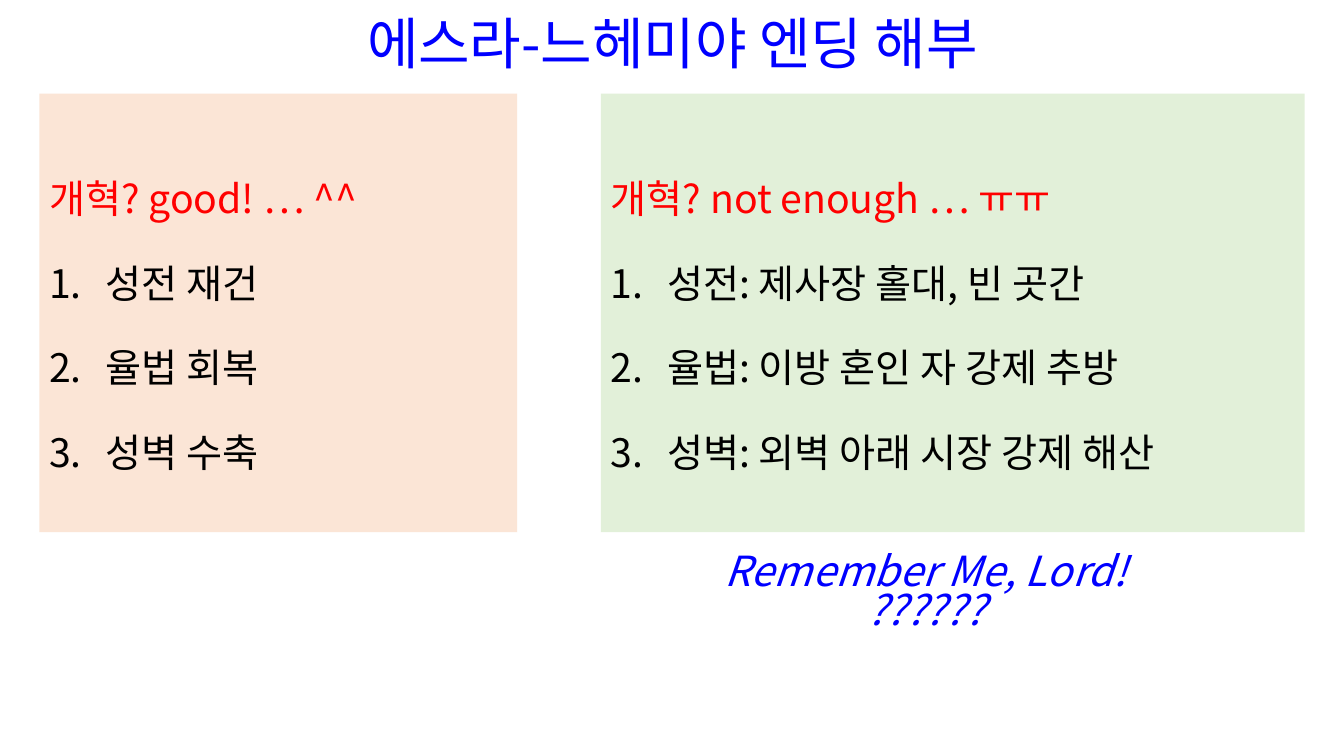
from lxml import etree
from pptx import Presentation
from pptx.dml.color import RGBColor
from pptx.enum.shapes import MSO_SHAPE
from pptx.enum.text import MSO_ANCHOR, PP_ALIGN
from pptx.oxml.ns import qn
from pptx.util import Inches, Pt

RECT = MSO_SHAPE.RECTANGLE
MIDDLE = MSO_ANCHOR.MIDDLE
LEFT, CENTER = PP_ALIGN.LEFT, PP_ALIGN.CENTER
FONT = "Noto Sans CJK KR"
BLUE, RED, BLACK = "0000FF", "FF0000", "000000"
ROW = 0.93      # height of the title and of the closing words
INDENT = 0.56


def paint(color, tone):
    """Set a fill or font colour from a hex string."""
    color.rgb = RGBColor.from_string(tone)


def write(shape, lines, size, align, space, gap=0, italic=False):
    """Fill a shape with (text, colour, numbered) lines."""
    frame = shape.text_frame
    frame.word_wrap = True
    frame.vertical_anchor = MIDDLE
    for i, (text, tone, numbered) in enumerate(lines):
        para = frame.add_paragraph() if i else frame.paragraphs[0]
        para.alignment = align
        para.line_spacing = space
        para.space_before = Pt(gap if i else 0)
        if numbered:
            props = para._p.get_or_add_pPr()
            props.set("marL", str(Inches(INDENT)))
            props.set("indent", str(-Inches(INDENT)))
            etree.SubElement(props, qn("a:buFont"), typeface="+mj-lt")
            etree.SubElement(props, qn("a:buAutoNum"), type="arabicPeriod")
        run = para.add_run()
        run.text = text
        font = run.font
        font.name, font.size, font.italic = FONT, Pt(size), italic
        paint(font.color, tone)
        etree.SubElement(run._r.get_or_add_rPr(), qn("a:ea"), typeface=FONT)


deck = Presentation()
deck.slide_width, deck.slide_height = Inches(13.33), Inches(7.5)
slide = deck.slides.add_slide(deck.slide_layouts[6])
shapes = slide.shapes

title = shapes.add_textbox(Inches(0.92), 0, Inches(11.5), Inches(ROW))
write(title, [("에스라-느헤미야 엔딩 해부", BLUE, False)], 40, CENTER, 0.9)

panels = [
    (0.39, 4.74, "FBE5D6", "개혁? good! … ^^",
     ["성전 재건", "율법 회복", "성벽 수축"]),
    (5.96, 6.98, "E2F0D9", "개혁? not enough … ㅠㅠ",
     ["성전: 제사장 홀대, 빈 곳간", "율법: 이방 혼인 자 강제 추방",
      "성벽: 외벽 아래 시장 강제 해산"]),
]
for left, width, tone, head, points in panels:
    panel = shapes.add_shape(RECT, Inches(left), Inches(ROW),
                             Inches(width), Inches(4.35))
    panel.shadow.inherit = False
    panel.fill.solid()
    paint(panel.fill.fore_color, tone)
    panel.line.fill.background()
    lines = [(head, RED, False)] + [(point, BLACK, True) for point in points]
    write(panel, lines, 28, LEFT, 1.5, gap=10)

plea = shapes.add_textbox(Inches(5.96), Inches(5.43), Inches(6.45), Inches(ROW))
words = [(text, BLUE, False) for text in ("Remember Me, Lord!", "??????")]
write(plea, words, 29.6, CENTER, 0.8, italic=True)

deck.save("out.pptx")
